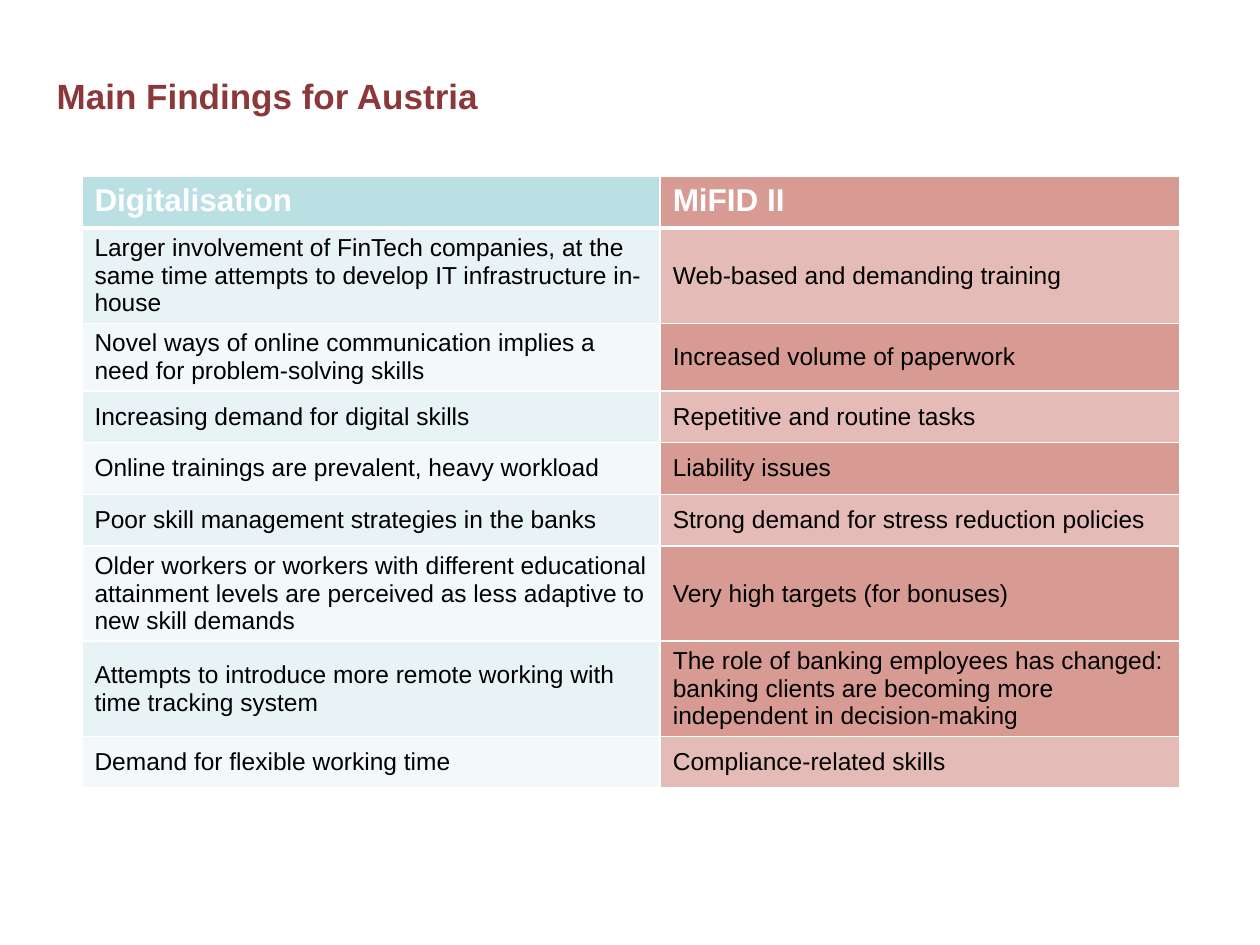
from lxml import etree
from pptx import Presentation
from pptx.dml.color import RGBColor
from pptx.enum.text import MSO_ANCHOR, PP_ALIGN
from pptx.oxml.ns import qn
from pptx.util import Inches, Pt

MIDDLE, TOP = MSO_ANCHOR.MIDDLE, MSO_ANCHOR.TOP
LEFT = PP_ALIGN.LEFT
TITLE_ONLY = 5
FONT = "Arial"
WHITE, BLACK, MAROON = "FFFFFF", "000000", "8C383A"
TEAL, TEAL_LIGHT, TEAL_PALE = "BBE0E3", "E7F3F4", "F3F9FA"
ROSE, ROSE_LIGHT = "D79B93", "E4BBB6"

COL_WIDTHS = [4.59, 4.12]
ROW_HEIGHT = 0.41
HEADER = ["Digitalisation", "MiFID II"]
# Digitalisation finding, MiFID II finding, fill of the MiFID II cell
FINDINGS = [
    ("Larger involvement of FinTech companies, at the same time attempts "
     "to develop IT infrastructure in-house",
     "Web-based and demanding training", ROSE_LIGHT),
    ("Novel ways of online communication implies a need for "
     "problem-solving skills",
     "Increased volume of paperwork", ROSE),
    ("Increasing demand for digital skills",
     "Repetitive and routine tasks", ROSE_LIGHT),
    ("Online trainings are prevalent, heavy workload",
     "Liability issues", ROSE),
    ("Poor skill management strategies in the banks",
     "Strong demand for stress reduction policies", ROSE_LIGHT),
    ("Older workers or workers with different educational attainment levels "
     "are perceived as less adaptive to new skill demands",
     "Very high targets (for bonuses)", ROSE),
    ("Attempts to introduce more remote working with time tracking system",
     "The role of banking employees has changed: banking clients are "
     "becoming more independent in decision-making", ROSE),
    ("Demand for flexible working time",
     "Compliance-related skills", ROSE_LIGHT),
]


def rgb(value):
    return RGBColor.from_string(value)


def add_text(tf, text, size, color, bold):
    p = tf.paragraphs[0]
    p.alignment = LEFT
    r = p.add_run()
    r.text = text
    r.font.name, r.font.size, r.font.bold = FONT, Pt(size), bold
    r.font.color.rgb = rgb(color)


def set_borders(cell, top, bottom):
    """Draw white cell edges; must run before the fill is set."""
    tc_pr = cell._tc.get_or_add_tcPr()
    for tag, width in (("lnL", 1), ("lnR", 1), ("lnT", top), ("lnB", bottom)):
        ln = etree.SubElement(tc_pr, qn(f"a:{tag}"), w=str(Pt(width)))
        fill = etree.SubElement(ln, qn("a:solidFill"))
        etree.SubElement(fill, qn("a:srgbClr"), val=WHITE)


def format_cell(cell, text, fill, size, color, bold, anchor, top, bottom):
    set_borders(cell, top, bottom)
    cell.fill.solid()
    cell.fill.fore_color.rgb = rgb(fill)
    cell.vertical_anchor = anchor
    add_text(cell.text_frame, text, size, color, bold)


def add_title(s, text):
    title = s.shapes.title
    title.left, title.top = Inches(0.35), Inches(0.13)
    title.width, title.height = Inches(9), Inches(1.25)
    title.text_frame.vertical_anchor = MIDDLE
    add_text(title.text_frame, text, 20, MAROON, True)


def add_findings_table(s):
    rows = len(FINDINGS) + 1
    table = s.shapes.add_table(
        rows, len(COL_WIDTHS), Inches(0.65), Inches(1.4),
        Inches(sum(COL_WIDTHS)), Inches(rows * ROW_HEIGHT)).table
    for column, width in zip(table.columns, COL_WIDTHS):
        column.width = Inches(width)

    for col, (text, fill) in enumerate(zip(HEADER, (TEAL, ROSE))):
        format_cell(table.cell(0, col), text, fill, 18, WHITE, True, TOP, 1, 3)

    for row, (digital, mifid, mifid_fill) in enumerate(FINDINGS, start=1):
        digital_fill = TEAL_LIGHT if row % 2 else TEAL_PALE
        top = 3 if row == 1 else 1
        cells = ((digital, digital_fill), (mifid, mifid_fill))
        for col, (text, fill) in enumerate(cells):
            format_cell(table.cell(row, col), text, fill, 14, BLACK, False,
                        MIDDLE, top, 1)


def main():
    prs = Presentation()
    prs.slide_width, prs.slide_height = Inches(10), Inches(7.5)
    s = prs.slides.add_slide(prs.slide_layouts[TITLE_ONLY])
    add_title(s, "Main Findings for Austria")
    add_findings_table(s)
    prs.save("out.pptx")


if __name__ == "__main__":
    main()
